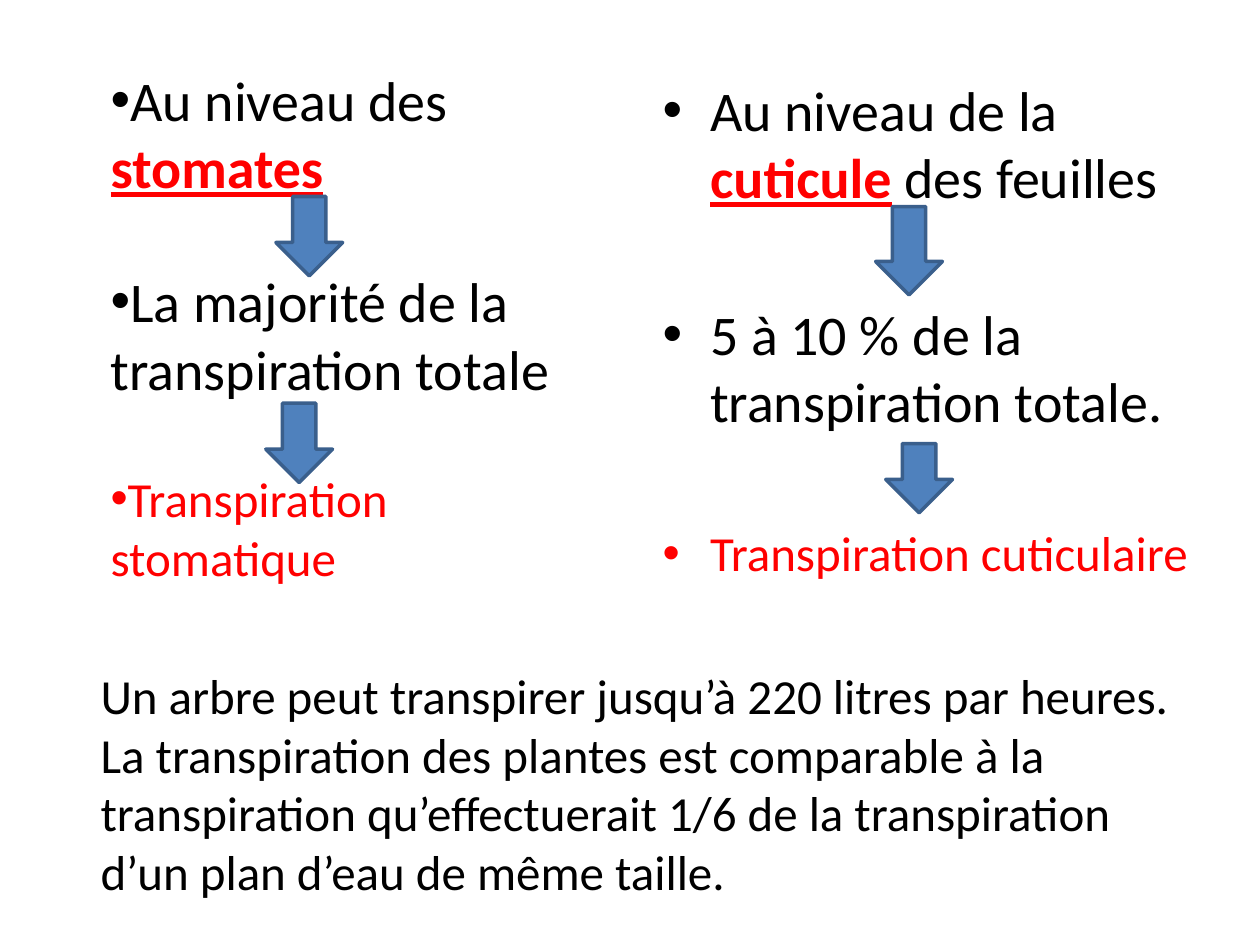
from lxml.etree import SubElement
from pptx import Presentation
from pptx.dml.color import RGBColor
from pptx.enum.shapes import MSO_SHAPE
from pptx.enum.text import MSO_ANCHOR, MSO_AUTO_SIZE
from pptx.oxml.ns import qn
from pptx.util import Inches, Pt

BLACK = RGBColor(0x00, 0x00, 0x00)
RED = RGBColor(0xFF, 0x00, 0x00)
BLUE = RGBColor(0x4F, 0x81, 0xBD)
DARK_BLUE = RGBColor(0x3A, 0x5F, 0x8C)


class SlideBuilder:
    FONT = "Calibri"
    COLUMNS, ROWS = 100, 75
    BODY, CONCLUSION = 32, 28

    def __init__(self, deck):
        self.slide = deck.slides.add_slide(deck.slide_layouts[1])
        self.column = deck.slide_width / self.COLUMNS
        self.row = deck.slide_height / self.ROWS
        title = self.slide.shapes.title
        title.element.getparent().remove(title.element)

    def area(self, left, top, width, height):
        return (round(left * self.column), round(top * self.row),
                round(width * self.column), round(height * self.row))

    def body(self, *box):
        content = self.slide.placeholders[1]
        content.left, content.top, content.width, content.height = self.area(*box)
        return self.prepare(content.text_frame)

    def text_box(self, *box):
        return self.prepare(self.slide.shapes.add_textbox(*self.area(*box)).text_frame)

    def prepare(self, frame):
        frame.word_wrap = True
        frame.auto_size = MSO_AUTO_SIZE.NONE
        frame.vertical_anchor = MSO_ANCHOR.TOP
        return frame

    def run(self, paragraph, text, size, color=BLACK, emphasis=None):
        run = paragraph.add_run()
        run.text = text
        font = run.font
        font.name, font.size, font.bold, font.underline = self.FONT, Pt(size), emphasis, emphasis
        font.color.rgb = color

    def bullet(self, paragraph):
        properties = paragraph._p.get_or_add_pPr()
        SubElement(properties, qn("a:buFont")).set("typeface", "Arial")
        SubElement(properties, qn("a:buChar")).set("char", "•")

    def steps(self, frame, steps, gap):
        for index, runs in enumerate(steps):
            paragraph = frame.paragraphs[0] if index == 0 else frame.add_paragraph()
            paragraph.space_before = Pt(gap if index else 0)
            self.bullet(paragraph)
            for run in runs:
                self.run(paragraph, *run)

    def down_arrow(self, *box):
        arrow = self.slide.shapes.add_shape(MSO_SHAPE.DOWN_ARROW, *self.area(*box))
        arrow.shadow.inherit = False
        arrow.fill.solid()
        arrow.fill.fore_color.rgb = BLUE
        arrow.line.color.rgb = DARK_BLUE
        arrow.line.width = Pt(2)


def main():
    deck = Presentation()
    deck.slide_width, deck.slide_height = Inches(10), Inches(7.5)
    page = SlideBuilder(deck)
    body, conclusion = page.BODY, page.CONCLUSION

    cuticle = page.body(51.6, 5.5, 43.8, 49.5)
    page.steps(cuticle, [
        [("Au niveau de la ", body), ("cuticule", body, RED, True), (" des feuilles", body)],
        [("5 à 10 % de la transpiration totale.", body)],
        [("Transpiration cuticulaire", conclusion, RED)],
    ], gap=51)

    stomata = page.text_box(7.8, 4.7, 40.6, 70)
    page.steps(stomata, [
        [("Au niveau des ", body), ("stomates", body, RED, True)],
        [("La majorité de la transpiration totale", body)],
        [("Transpiration stomatique", conclusion, RED)],
    ], gap=38.3)

    for left, top, height in [(69.5, 16.4, 7), (70.3, 35.2, 5.5),
                              (21.9, 15.6, 6.3), (21.1, 32, 6.3)]:
        page.down_arrow(left, top, 5.3, height)

    comparison = page.text_box(7, 52.3, 88.3, 19.9)
    page.run(comparison.paragraphs[0],
             "Un arbre peut transpirer jusqu’à 220 litres par heures. "
             "La transpiration des plantes est comparable à la transpiration "
             "qu’effectuerait 1/6 de la transpiration d’un plan d’eau de même taille.",
             conclusion)
    deck.save("out.pptx")


if __name__ == "__main__":
    main()
